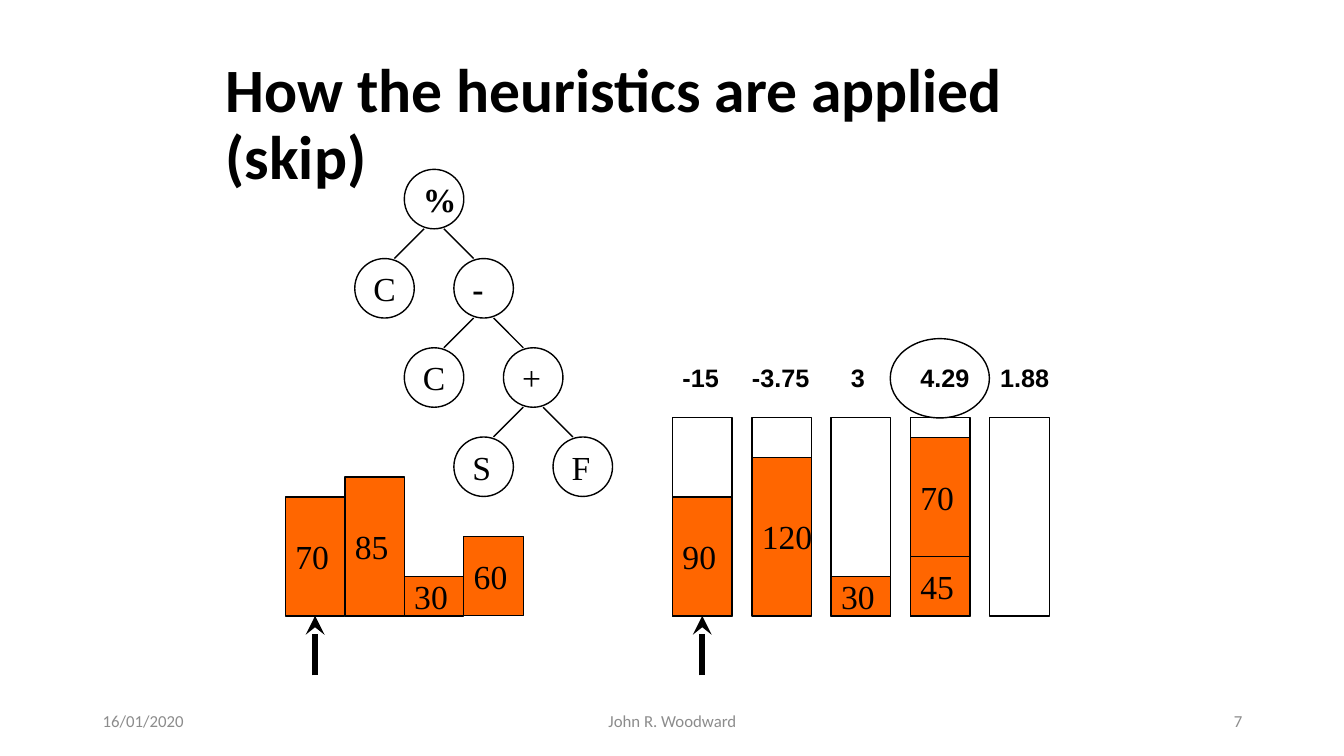
from lxml.etree import SubElement
from pptx import Presentation
from pptx.dml.color import RGBColor
from pptx.enum.shapes import MSO_CONNECTOR, MSO_SHAPE
from pptx.enum.text import MSO_ANCHOR, PP_ALIGN
from pptx.oxml.ns import qn
from pptx.util import Inches, Pt

BLACK, WHITE, ORANGE, GREY = "000000", "FFFFFF", "FF6600", "8C8C8C"
SIDE = 0.59        # width of a bar and of a tree node
CELL = SIDE / 3    # height step of the bars
BASE = 6.11        # foot of all bars

deck = Presentation()
deck.slide_width, deck.slide_height = Inches(13.33), Inches(7.5)
slide = deck.slides.add_slide(deck.slide_layouts[6])
shapes = slide.shapes


def write(shape, text, font, align=PP_ALIGN.LEFT, anchor=MSO_ANCHOR.MIDDLE,
          wrap=False, color=BLACK):
    frame = shape.text_frame
    frame.word_wrap, frame.vertical_anchor = wrap, anchor
    par = frame.paragraphs[0]
    par.alignment = align
    run = par.add_run()
    run.text = text
    for name, value in font.items():
        setattr(run.font, name, value)
    run.font.color.rgb = RGBColor.from_string(color)
    return par


def draw(kind, left, top, width, height, fill=None, text="", bold=False):
    """Add an outlined shape, with a label if one is given."""
    shape = shapes.add_shape(kind, *map(Inches, (left, top, width, height)))
    shape.shadow.inherit = False
    shape.line.color.rgb = RGBColor.from_string(BLACK)
    shape.line.width = Pt(1)
    if fill:
        shape.fill.solid()
        shape.fill.fore_color.rgb = RGBColor.from_string(fill)
    else:
        shape.fill.background()
    if text:
        write(shape, text, {"name": "Times New Roman", "size": Pt(24), "bold": bold})
    return shape


# Title
title = shapes.add_textbox(Inches(2.14), Inches(0.5), Inches(9), Inches(1.5))
par = write(title, "How the heuristics are applied (skip)",
            {"name": "Calibri", "size": Pt(44), "bold": True}, wrap=True)
par.line_spacing = 0.9

lines = []    # x1, y1, x2, y2, bar pointed at

# Pieces to pack, then bins: each bar is a stack of (label, cells)
pieces = [[("70", 6)], [("85", 7)], [("30", 2)], [("60", 4)]]
bins = [[("90", 6)], [("120", 8)], [("30", 2)], [("45", 3), ("70", 6)], []]
for start, step, stacks, empty in ((2.83, 3, pieces, 0), (6.67, 4, bins, 10)):
    for i, stack in enumerate(stacks):
        left, foot = start + i * step * CELL, BASE
        if empty:
            draw(MSO_SHAPE.RECTANGLE, left, BASE - empty * CELL, SIDE, empty * CELL, WHITE)
        for text, cells in stack:
            foot -= cells * CELL
            bar = draw(MSO_SHAPE.RECTANGLE, left, foot, SIDE, cells * CELL, ORANGE, text)
            if i == 0:
                mid = left + SIDE / 2
                lines.append((mid, 6.7, mid, BASE, bar))

# Expression tree: label, column, row, side of its parent
nodes = [("%", 0, 0, 0), ("C", -1, 1, -1), ("-", 1, 1, 1), ("C", 0, 2, -1),
         ("+", 2, 2, 1), ("S", 1, 3, -1), ("F", 3, 3, 1)]
for text, col, row, side in nodes:
    left, top = 4.01 + col * 2.5 * CELL, 1.68 + row * 4.5 * CELL
    draw(MSO_SHAPE.OVAL, left, top, SIDE, SIDE, WHITE, text, text in "%-")
    if side:
        mid = left + SIDE / 2
        lines.append((mid - side * 2 * CELL, top - 1.5 * CELL,
                      mid - side * CELL / 2, top, None))

# Tree edges and arrows
for x1, y1, x2, y2, bar in lines:
    line = shapes.add_connector(MSO_CONNECTOR.STRAIGHT, *map(Inches, (x1, y1, x2, y2)))
    line.line.color.rgb = RGBColor.from_string(BLACK)
    line.line.width = Pt(4.5 if bar else 1)
    props = line._element.spPr
    SubElement(props, qn("a:effectLst"))
    if bar:
        line.end_connect(bar, 2)
        SubElement(props.find(qn("a:ln")), qn("a:tailEnd"), type="stealth")

# Scores, with the best one ringed
scores = [("-15", 6.67, 0.56), ("-3.75", 7.36, 0.77), ("3", 8.34, 0.34),
          ("4.29", 9.03, 0.69), ("1.88", 9.82, 0.69)]
for text, left, width in scores:
    score = shapes.add_textbox(Inches(left), Inches(3.55), Inches(width), Inches(0.4))
    write(score, text, {"name": "Arial", "size": Pt(18), "bold": True},
          anchor=MSO_ANCHOR.TOP)
draw(MSO_SHAPE.OVAL, 8.83, 3.36, 5 * CELL, 4 * CELL)

# Footer
for text, left, width, align in (("16/01/2020", 0.92, 3, PP_ALIGN.LEFT),
                                 ("John R. Woodward", 4.42, 4.5, PP_ALIGN.CENTER),
                                 ("7", 9.42, 3, PP_ALIGN.RIGHT)):
    foot = shapes.add_textbox(Inches(left), Inches(6.95), Inches(width), Inches(0.4))
    write(foot, text, {"name": "Calibri", "size": Pt(12)}, align, wrap=True, color=GREY)

deck.save("out.pptx")
